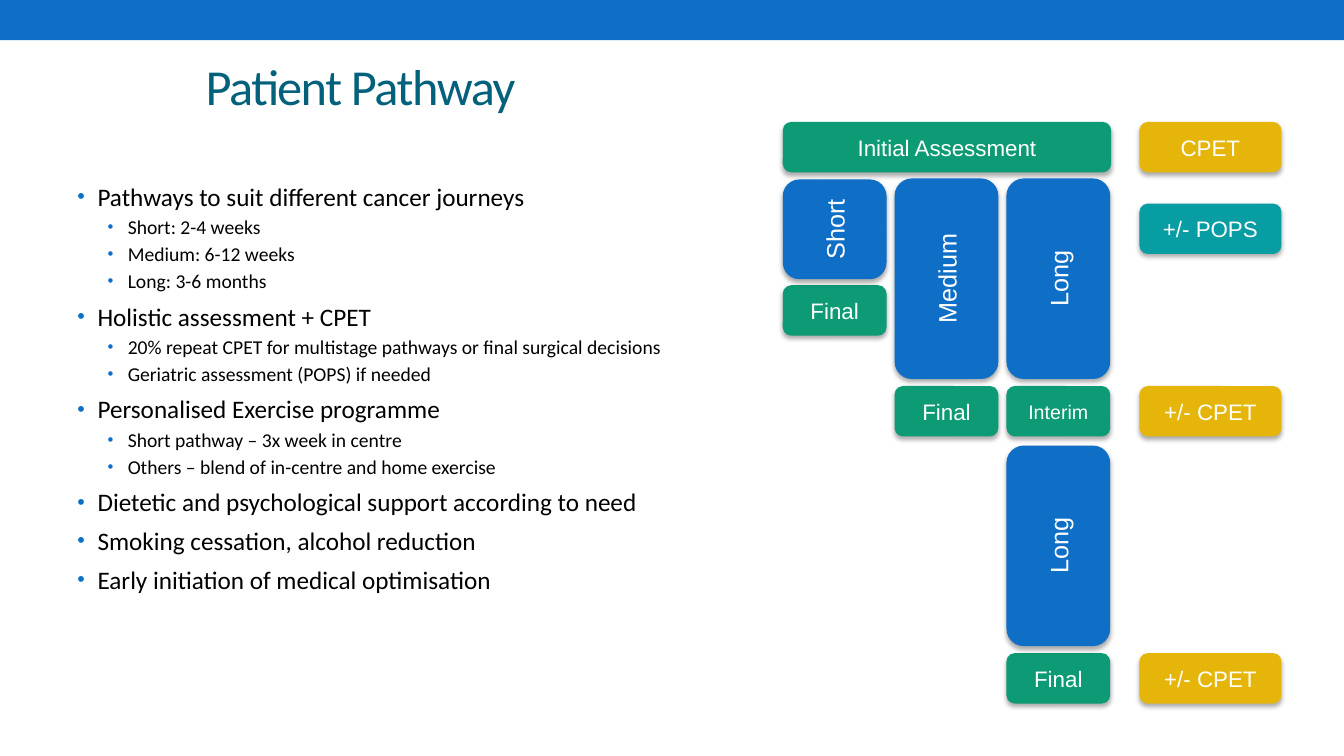
from lxml import etree
from pptx import Presentation
from pptx.dml.color import RGBColor
from pptx.enum import shapes, text
from pptx.oxml import ns
from pptx.util import Inches, Pt

BLUE = RGBColor(0x0F, 0x6F, 0xC6)
GREEN = RGBColor(0x0C, 0x9B, 0x74)
GOLD = RGBColor(0xE5, 0xB6, 0x09)
TEAL = RGBColor(0x08, 0x9C, 0xA3)
NAVY = RGBColor(0x04, 0x61, 0x7B)
BLACK = RGBColor(0, 0, 0)
WHITE = RGBColor(255, 255, 255)

# Pathway grid: three columns, with a side column for tests
COLS = [7.77 + 1.11 * i for i in range(3)]
SIDE = 11.31
WIDE, SLIM, SPAN = 1.41, 1.03, 3.26
STEP = 0.5

POINTS = [
    (0, "Pathways to suit different cancer journeys"),
    (1, "Short: 2-4 weeks"),
    (1, "Medium: 6-12 weeks"),
    (1, "Long: 3-6 months"),
    (0, "Holistic assessment + CPET"),
    (1, "20% repeat CPET for multistage pathways or final surgical decisions"),
    (1, "Geriatric assessment (POPS) if needed"),
    (0, "Personalised Exercise programme"),
    (1, "Short pathway – 3x week in centre"),
    (1, "Others – blend of in-centre and home exercise"),
    (0, "Dietetic and psychological support according to need"),
    (0, "Smoking cessation, alcohol reduction"),
    (0, "Early initiation of medical optimisation"),
]

# Label, left, top, width, colour, size
STEPS = [
    ("Initial Assessment", COLS[0], 1.21, SPAN, GREEN, 16),
    ("Final", COLS[0], 2.83, SLIM, GREEN, 16),
    ("Final", COLS[1], 3.83, SLIM, GREEN, 16),
    ("Interim", COLS[2], 3.83, SLIM, GREEN, 14),
    ("Final", COLS[2], 6.48, SLIM, GREEN, 16),
    ("CPET", SIDE, 1.21, WIDE, GOLD, 16),
    ("+/- CPET", SIDE, 3.83, WIDE, GOLD, 16),
    ("+/- CPET", SIDE, 6.48, WIDE, GOLD, 16),
    ("+/- POPS", SIDE, 2.02, WIDE, TEAL, 16),
]

# Label, left, top, height
PHASES = [
    ("Short", COLS[0], 1.78, 0.99),
    ("Medium", COLS[1], 1.77, 1.99),
    ("Long", COLS[2], 1.77, 1.99),
    ("Long", COLS[2], 4.42, 1.99),
]


def add(node, tag, **attrs):
    return etree.SubElement(node, ns.qn(tag), attrs)


class Deck:
    head, sans = "Calibri", "Arial"

    def __init__(self, wide, high):
        self.prs = Presentation()
        self.prs.slide_width, self.prs.slide_height = Inches(wide), Inches(high)
        self.slide = self.prs.slides.add_slide(self.prs.slide_layouts[5])

    def font(self, para, name, size, color):
        para.font.name, para.font.size = name, Pt(size)
        para.font.color.rgb = color

    def shape(self, kind, box, color):
        item = self.slide.shapes.add_shape(kind, *map(Inches, box))
        item.shadow.inherit = False
        item.fill.solid()
        item.fill.fore_color.rgb = color
        item.line.fill.background()
        return item

    def title(self, words, box):
        item = self.slide.shapes.title
        item.left, item.top, item.width, item.height = map(Inches, box)
        frame = item.text_frame
        frame.text = words
        frame.auto_size = text.MSO_AUTO_SIZE.NONE
        frame.vertical_anchor = text.MSO_ANCHOR.MIDDLE
        para = frame.paragraphs[0]
        para.alignment = text.PP_ALIGN.LEFT
        self.font(para, self.head, 36, NAVY)
        para.runs[0].font._element.set("spc", "-100")

    def bullets(self, points, box):
        frame = self.slide.shapes.add_textbox(*map(Inches, box)).text_frame
        frame.word_wrap = True
        for i, (level, words) in enumerate(points):
            para = frame.add_paragraph() if i else frame.paragraphs[0]
            para.text, para.level = words, level
            self.font(para, self.head, 14 if level else 18, BLACK)
            para.space_before = Pt(2.5 if level else 6 if i else 3.6)
            props = para._p.get_or_add_pPr()
            props.set("marL", str(Inches(0.5 if level else 0.2)))
            props.set("indent", str(Inches(-0.2)))
            # Bullet marks go ahead of the default run style
            style = props.find(ns.qn("a:defRPr"))
            tint = add(props, "a:buClr")
            add(tint, "a:srgbClr", val=str(BLUE))
            add(props, "a:buSzPct", val="85000")
            add(props, "a:buFont", typeface=self.sans)
            add(props, "a:buChar", char="•")
            if style is not None:
                props.append(style)

    def block(self, words, box, color, size, turn=False):
        item = self.shape(shapes.MSO_SHAPE.ROUNDED_RECTANGLE, box, color)
        effects = item._element.spPr.find(ns.qn("a:effectLst"))
        shade = add(effects, "a:outerShdw", blurRad=str(Pt(3.5)),
                    dist=str(Pt(2.2)), dir="5400000", rotWithShape="0")
        tint = add(shade, "a:srgbClr", val=str(BLACK))
        add(tint, "a:alpha", val="32000")
        frame = item.text_frame
        frame.text = words
        frame.word_wrap = True
        frame.vertical_anchor = text.MSO_ANCHOR.MIDDLE
        if turn:
            frame._txBody.bodyPr.set("vert", "vert270")
        para = frame.paragraphs[0]
        para.alignment = text.PP_ALIGN.CENTER
        self.font(para, self.sans, size, WHITE)


def main():
    deck = Deck(13.34, 7.5)

    # Top band, title and points
    deck.shape(shapes.MSO_SHAPE.RECTANGLE, (0, 0, 13.34, 0.4), BLUE)
    deck.title("Patient Pathway", (1.94, 0.22, 5.04, 1.25))
    deck.bullets(POINTS, (0.67, 1.75, 6.53, 5.22))

    # Pathway chart
    for words, left, top, width, color, size in STEPS:
        deck.block(words, (left, top, width, STEP), color, size)
    for words, left, top, high in PHASES:
        deck.block(words, (left, top, SLIM, high), BLUE, 18, turn=True)

    deck.prs.save("out.pptx")


if __name__ == "__main__":
    main()
